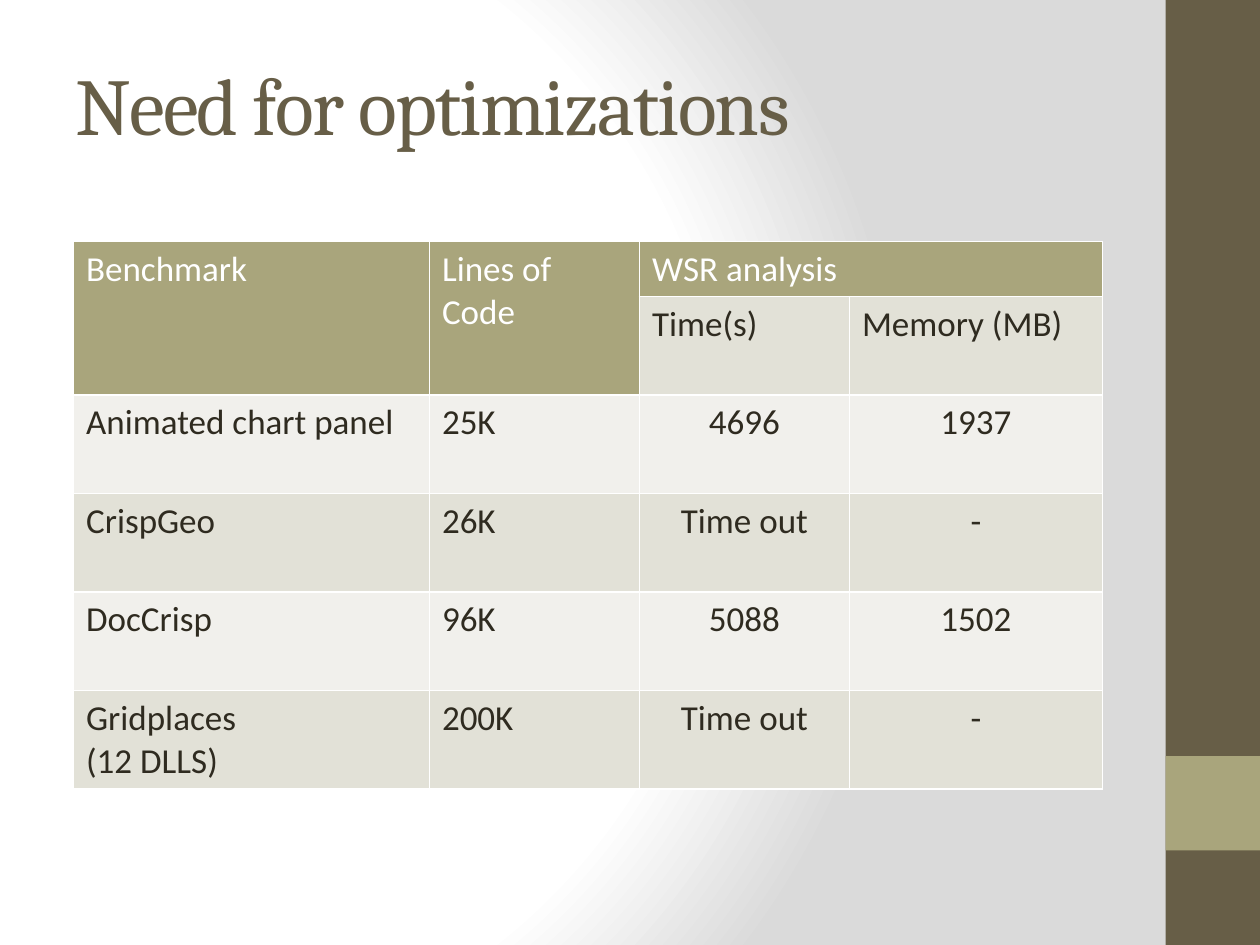
from pptx import Presentation
from pptx.dml.color import RGBColor
from pptx.enum.shapes import MSO_SHAPE as Shape
from pptx.enum.text import MSO_ANCHOR as Anchor, PP_ALIGN as Align
from pptx.oxml import parse_xml
from pptx.oxml.ns import nsdecls
from pptx.util import Pt

BROWN, OLIVE, INK, WHITE = "675E47", "A9A57C", "2F2B20", "FFFFFF"
DARK, LIGHT = "E2E1D7", "F1F0EC"
ROWS = [
    ["Benchmark", "Lines of Code", "WSR analysis", ""],
    ["", "", "Time(s)", "Memory (MB)"],
    ["Animated chart panel", "25K", "4696", "1937"],
    ["CrispGeo", "26K", "Time out", "-"],
    ["DocCrisp", "96K", "5088", "1502"],
    ["Gridplaces\n(12 DLLS)", "200K", "Time out", "-"],
]


def paint(fill, tone):
    """Give a fill one solid colour."""
    fill.solid()
    fill.fore_color.rgb = RGBColor.from_string(tone)


def write(par, text, font, size, tone):
    """Add one styled run to a paragraph."""
    run = par.add_run()
    run.text = text
    run.font.name, run.font.size = font, Pt(size)
    paint(run.font.fill, tone)
    return run


def backdrop(slide):
    """Set the round white to grey gradient behind the slide."""
    stops = "".join(
        f'<a:gs pos="{pos * 1000}"><a:srgbClr val="{tone}"/></a:gs>'
        for pos, tone in ((0, WHITE), (75, WHITE), (100, "DADADA")))
    slide.element.cSld.insert(0, parse_xml(
        f'<p:bg {nsdecls("p", "a")}><p:bgPr><a:gradFill rotWithShape="1">'
        f'<a:gsLst>{stops}</a:gsLst><a:path path="circle">'
        '<a:fillToRect l="20000" t="50000" r="100000" b="50000"/></a:path>'
        '</a:gradFill><a:effectLst/></p:bgPr></p:bg>'))


def sidebar(slide, left, top, width, height):
    """Draw the brown band with its olive square."""
    square = top + height * 0.8
    for y, tall, tone in ((top, height, BROWN), (square, width, OLIVE)):
        rect = slide.shapes.add_shape(
            Shape.RECTANGLE, Pt(left), Pt(y), Pt(width), Pt(tall))
        rect.shadow.inherit = False
        paint(rect.fill, tone)
        rect.line.fill.background()


def heading(slide, left, top, width, height):
    """Write the slide title."""
    box = slide.shapes.add_textbox(Pt(left), Pt(top), Pt(width), Pt(height))
    frame = box.text_frame
    frame.word_wrap = True
    frame.vertical_anchor = Anchor.MIDDLE
    run = write(frame.paragraphs[0], "Need for optimizations",
                "Cambria", 46, BROWN)
    run.font._element.set("spc", "-100")


def edge(cell):
    """Rule a cell with thin white lines on all sides."""
    props = cell._tc.get_or_add_tcPr()
    for spot, side in enumerate("LRTB"):
        props.insert(spot, parse_xml(
            f'<a:ln{side} {nsdecls("a")} w="12700"><a:solidFill>'
            f'<a:srgbClr val="{WHITE}"/></a:solidFill></a:ln{side}>'))


def results(slide, left, top, width, height):
    """Build the benchmark table with its merged header."""
    first = 31.5
    rest = (height - first) / (len(ROWS) - 1)
    grid = slide.shapes.add_table(
        len(ROWS), 4, Pt(left), Pt(top), Pt(width), Pt(height)).table
    for col, part in zip(grid.columns, (203.4, 120, 120, 144.6)):
        col.width = Pt(width * part / 588)
    for r, (row, texts) in enumerate(zip(grid.rows, ROWS)):
        row.height = Pt(rest if r else first)
        for c, (cell, text) in enumerate(zip(row.cells, texts)):
            head = r == 0 or (r == 1 and c < 2)
            paint(cell.fill, OLIVE if head else DARK if r % 2 else LIGHT)
            edge(cell)
            for n, line in enumerate(text.split("\n") if text else []):
                frame = cell.text_frame
                par = frame.add_paragraph() if n else frame.paragraphs[0]
                par.alignment = Align.CENTER if r > 1 < c else Align.LEFT
                write(par, line, "Calibri", 20, WHITE if head else INK)
    for c in (0, 1):
        grid.cell(0, c).merge(grid.cell(1, c))
    grid.cell(0, 2).merge(grid.cell(0, 3))


def main():
    """Build and save the slide."""
    deck = Presentation()
    deck.slide_width, deck.slide_height = Pt(720), Pt(540)
    slide = deck.slides.add_slide(deck.slide_layouts[6])
    backdrop(slide)
    sidebar(slide, 666, 0, 54, 540)
    heading(slide, 36, 22, 600, 74)
    results(slide, 42, 138, 588, 313)
    deck.save("out.pptx")


if __name__ == "__main__":
    main()
